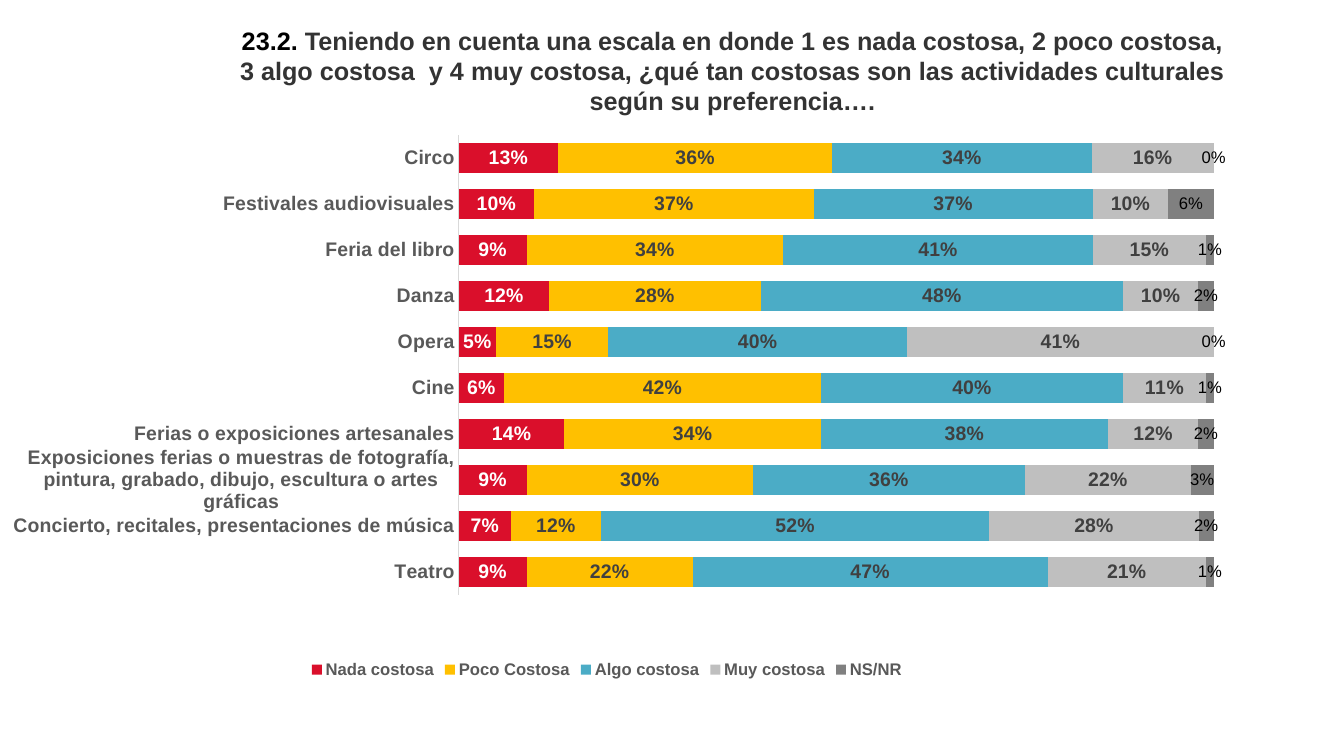
import pptx
import pptx.chart.data
import pptx.dml.color
import pptx.enum.chart
import pptx.enum.text
import pptx.oxml
import pptx.oxml.ns
import pptx.util

ACTIVITIES = [
    "Teatro",
    "Concierto, recitales, presentaciones de música",
    "Exposiciones ferias o muestras de fotografía, pintura, grabado, dibujo, escultura o artes gráficas",
    "Ferias o exposiciones artesanales",
    "Cine",
    "Opera",
    "Danza",
    "Feria del libro",
    "Festivales audiovisuales",
    "Circo",
]
ANSWERS = [
    ("Nada costosa", "DA0F2B", "FFFFFF", [9, 7, 9, 14, 6, 5, 12, 9, 10, 13]),
    ("Poco Costosa", "FFC000", "404040", [22, 12, 30, 34, 42, 15, 28, 34, 37, 36]),
    ("Algo costosa", "4BACC6", "404040", [47, 52, 36, 38, 40, 40, 48, 41, 37, 34]),
    ("Muy costosa", "BFBFBF", "404040", [21, 28, 22, 12, 11, 41, 10, 15, 10, 16]),
    ("NS/NR", "808080", "000000", [1, 2, 3, 2, 1, 0, 2, 1, 6, 0]),
]
QUESTION = (
    "Teniendo en cuenta una escala en donde 1 es nada costosa, 2 poco costosa, "
    "3 algo costosa  y 4 muy costosa, ¿qué tan costosas son las actividades "
    "culturales según su preferencia…."
)


def color(value):
    return pptx.dml.color.RGBColor.from_string(value)


def format_font(font, size, fill="000000", bold=False):
    font.name = "Arial"
    font.size = pptx.util.Pt(size)
    font.bold = bold
    font.color.rgb = color(fill)


def add_run(paragraph, text, **style):
    run = paragraph.add_run()
    run.text = text
    format_font(run.font, **style)


class SurveySlide:
    def __init__(self, presentation):
        self.width = presentation.slide_width
        self.height = presentation.slide_height
        self.slide = presentation.slides.add_slide(presentation.slide_layouts[6])

    def place(self, left, top, width, height):
        return (
            round(left * self.width),
            round(top * self.height),
            round(width * self.width),
            round(height * self.height),
        )

    def add_title(self, number, question, *shares):
        frame = self.slide.shapes.add_textbox(*self.place(*shares)).text_frame
        frame.word_wrap = True
        paragraph = frame.paragraphs[0]
        paragraph.alignment = pptx.enum.text.PP_ALIGN.CENTER
        add_run(paragraph, number, size=18, bold=True)
        add_run(paragraph, question, size=18, fill="333333", bold=True)

    def add_stacked_bars(self, categories, answers, *shares):
        data = pptx.chart.data.CategoryChartData(number_format="0%")
        data.categories = categories
        for name, _, _, percentages in answers:
            data.add_series(name, [value / 100 for value in percentages])
        chart = self.slide.shapes.add_chart(
            pptx.enum.chart.XL_CHART_TYPE.BAR_STACKED_100, *self.place(*shares), data
        ).chart
        chart.has_title = False
        format_font(chart.font, 10)
        plot = chart.plots[0]
        plot.gap_width = 53
        plot.overlap = 100
        plot.vary_by_categories = False
        for series, (_, fill, label_fill, _) in zip(plot.series, answers):
            self.format_series(series, fill, label_fill)
        self.format_axes(chart)
        self.set_plot_area(chart, x=0.378, y=0.026, w=0.622, h=0.818)
        chart.has_legend = True
        chart.legend.position = pptx.enum.chart.XL_LEGEND_POSITION.BOTTOM
        chart.legend.include_in_layout = False
        format_font(chart.legend.font, 12, "595959", True)

    def format_series(self, series, fill, label_fill):
        series.format.fill.solid()
        series.format.fill.fore_color.rgb = color(fill)
        series.invert_if_negative = False
        labels = series.data_labels
        labels.show_value = True
        labels.number_format = "0%"
        labels.number_format_is_linked = False
        labels.position = pptx.enum.chart.XL_LABEL_POSITION.CENTER
        unanswered = series.name == "NS/NR"
        format_font(labels.font, 12 if unanswered else 14, label_fill, not unanswered)

    def format_axes(self, chart):
        axis = chart.category_axis
        axis.major_tick_mark = pptx.enum.chart.XL_TICK_MARK.NONE
        axis.minor_tick_mark = pptx.enum.chart.XL_TICK_MARK.NONE
        axis.format.line.color.rgb = color("D9D9D9")
        axis.format.line.width = pptx.util.Pt(0.75)
        format_font(axis.tick_labels.font, 14, "595959", True)
        chart.value_axis.visible = False
        chart.value_axis.has_major_gridlines = False
        chart.value_axis.minimum_scale = 0
        chart.value_axis.maximum_scale = 1

    def set_plot_area(self, chart, **shares):
        area = chart.element.find(".//" + pptx.oxml.ns.qn("c:plotArea"))
        for layout in area.findall(pptx.oxml.ns.qn("c:layout")):
            area.remove(layout)
        values = "".join(f'<c:{key} val="{share}"/>' for key, share in shares.items())
        area.insert(0, pptx.oxml.parse_xml(
            f'<c:layout {pptx.oxml.ns.nsdecls("c")}><c:manualLayout>'
            '<c:layoutTarget val="inner"/><c:xMode val="edge"/><c:yMode val="edge"/>'
            f"{values}</c:manualLayout></c:layout>"
        ))


def main():
    presentation = pptx.Presentation()
    presentation.slide_width = pptx.util.Inches(13.33)
    presentation.slide_height = pptx.util.Inches(7.5)
    survey = SurveySlide(presentation)
    survey.add_title("23.2. ", QUESTION, 0.168, 0.027, 0.754, 0.095)
    survey.add_stacked_bars(ACTIVITIES, ANSWERS, 0, 0.159, 0.912, 0.744)
    presentation.save("out.pptx")


if __name__ == "__main__":
    main()
